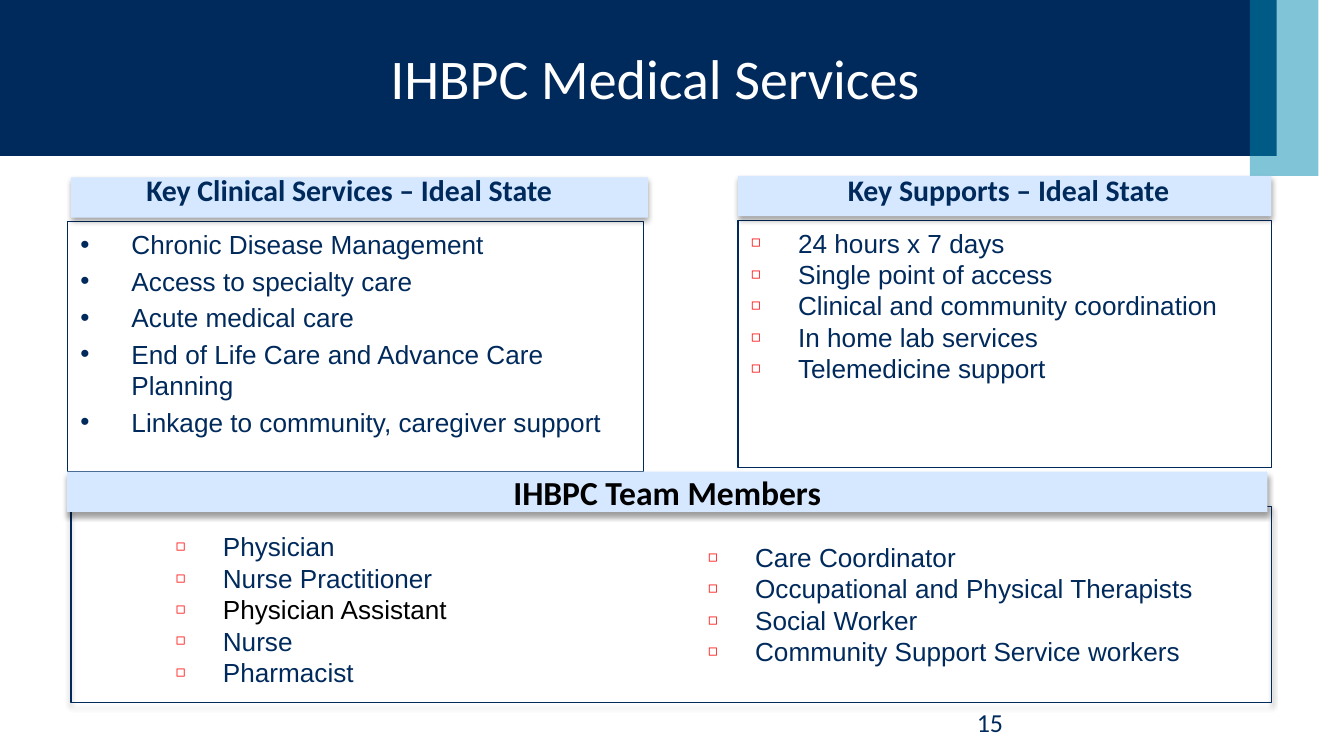
"""Build the IHBPC Medical Services slide."""
from lxml import etree
from pptx import Presentation
from pptx.dml.color import RGBColor
from pptx.enum.shapes import MSO_SHAPE
from pptx.enum.text import MSO_ANCHOR as ANCHOR, PP_ALIGN as ALIGN
from pptx.oxml.ns import qn
from pptx.util import Inches, Pt

COLORS = {"navy": "002A5C", "teal": "008BB0", "pale": "D5E8FF",
          "white": "FFFFFF", "black": "000000", "red": "FF0000"}


def add_box(left, top, width, height, fill=None, line=None, shadow=False, alpha=None):
    shape = slide.shapes.add_shape(MSO_SHAPE.RECTANGLE, Inches(left), Inches(top),
                                   Inches(width), Inches(height))
    shape.shadow.inherit = False
    if fill:
        shape.fill.solid()
        shape.fill.fore_color.rgb = RGBColor.from_string(COLORS[fill])
    else:
        shape.fill.background()
    if line:
        shape.line.color.rgb = RGBColor.from_string(COLORS[line])
        shape.line.width = Pt(0.75)
    else:
        shape.line.fill.background()
    if alpha:
        color = shape._element.spPr.find(qn("a:solidFill"))[0]
        etree.SubElement(color, qn("a:alpha"), val=str(alpha * 1000))
    if shadow:
        effects = shape._element.spPr.find(qn("a:effectLst"))
        outer = etree.SubElement(effects, qn("a:outerShdw"), blurRad=str(Pt(3.1)),
                                 dist=str(Pt(1.8)), dir="5400000", rotWithShape="0")
        color = etree.SubElement(outer, qn("a:srgbClr"), val=COLORS["black"])
        etree.SubElement(color, qn("a:alpha"), val="35000")
    return shape


def write(shape, *lines, size=14, font="Arial", color="navy", bold=False, align=ALIGN.LEFT,
          anchor=ANCHOR.TOP, wrap=True, bullet=None, indent=0.35, gap=0, special=None):
    frame = shape.text_frame
    frame.word_wrap = wrap
    frame.vertical_anchor = anchor
    for index, line in enumerate(lines):
        paragraph = frame.paragraphs[0] if index == 0 else frame.add_paragraph()
        paragraph.alignment = align
        if index and gap:
            paragraph.space_before = Pt(gap)
        if bullet:
            properties = paragraph._p.get_or_add_pPr()
            properties.set("marL", str(Inches(indent)))
            properties.set("indent", str(-Inches(indent)))
            if bullet == "◻":
                bullet_color = etree.SubElement(properties, qn("a:buClr"))
                etree.SubElement(bullet_color, qn("a:srgbClr"), val=COLORS["red"])
                etree.SubElement(properties, qn("a:buSzPct"), val="60000")
            etree.SubElement(properties, qn("a:buFont"), typeface=font)
            etree.SubElement(properties, qn("a:buChar"), char=bullet)
        run = paragraph.add_run()
        run.text = line
        run.font.size = Pt(size)
        run.font.name = font
        run.font.bold = bold
        run.font.color.rgb = RGBColor.from_string(COLORS["black" if line == special else color])


presentation = Presentation()
presentation.slide_width = Inches(10)
presentation.slide_height = Inches(10) * 9 // 16
slide = presentation.slides.add_slide(presentation.slide_layouts[6])

add_box(0, 0, 9.5, 1.16, fill="navy")
add_box(9.3, 0, 0.51, 1.31, fill="teal", alpha=50)
add_box(0.53, 3.77, 8.93, 1.46, line="navy", shadow=True)

title = slide.shapes.add_textbox(Inches(1.16), Inches(0.17), Inches(7.43), Inches(0.81))
write(title, "IHBPC Medical Services", size=30, font="Calibri", color="white",
      align=ALIGN.CENTER, anchor=ANCHOR.MIDDLE)
page_number = slide.shapes.add_textbox(Inches(7.17), Inches(5.21), Inches(2.33), Inches(0.3))
write(page_number, "15", size=13.9, font="Calibri")

clinical = add_box(0.5, 1.65, 4.29, 1.86, line="navy")
write(clinical, "Chronic Disease Management", "Access to specialty care", "Acute medical care",
      "End of Life Care and Advance Care Planning", "Linkage to community, caregiver support",
      bullet="•", indent=0.38, gap=2.8)
supports = add_box(5.49, 1.64, 3.97, 1.84, line="navy")
write(supports, "24 hours x 7 days", "Single point of access",
      "Clinical and community coordination", "In home lab services", "Telemedicine support",
      bullet="◻")

headings = [
    ("Key Clinical Services – Ideal State", (0.53, 1.32, 4.29, 0.3), 0.99, 3.26),
    ("Key Supports – Ideal State", (5.49, 1.31, 3.97, 0.3), 6.21, 2.63),
]
for text, bar, left, width in headings:
    add_box(*bar, fill="pale", shadow=True)
    heading = slide.shapes.add_textbox(Inches(left), Inches(1.23), Inches(width), Inches(0.37))
    write(heading, text, size=16, font="Calibri", bold=True, wrap=False)

team_columns = [
    ((1.21, 3.9, 4.54, 1.58),
     ["Physician", "Nurse Practitioner", "Physician Assistant", "Nurse", "Pharmacist"]),
    ((5.17, 3.98, 4.4, 1.33),
     ["Care Coordinator", "Occupational and Physical Therapists", "Social Worker",
      "Community Support Service workers"]),
]
for place, members in team_columns:
    column = slide.shapes.add_textbox(*map(Inches, place))
    write(column, *members, bullet="◻", special="Physician Assistant")

team_bar = add_box(0.5, 3.51, 8.93, 0.3, fill="pale", shadow=True)
write(team_bar, "IHBPC Team Members", size=18, font="Calibri", color="black", bold=True,
      align=ALIGN.CENTER, anchor=ANCHOR.MIDDLE)

presentation.save("out.pptx")
